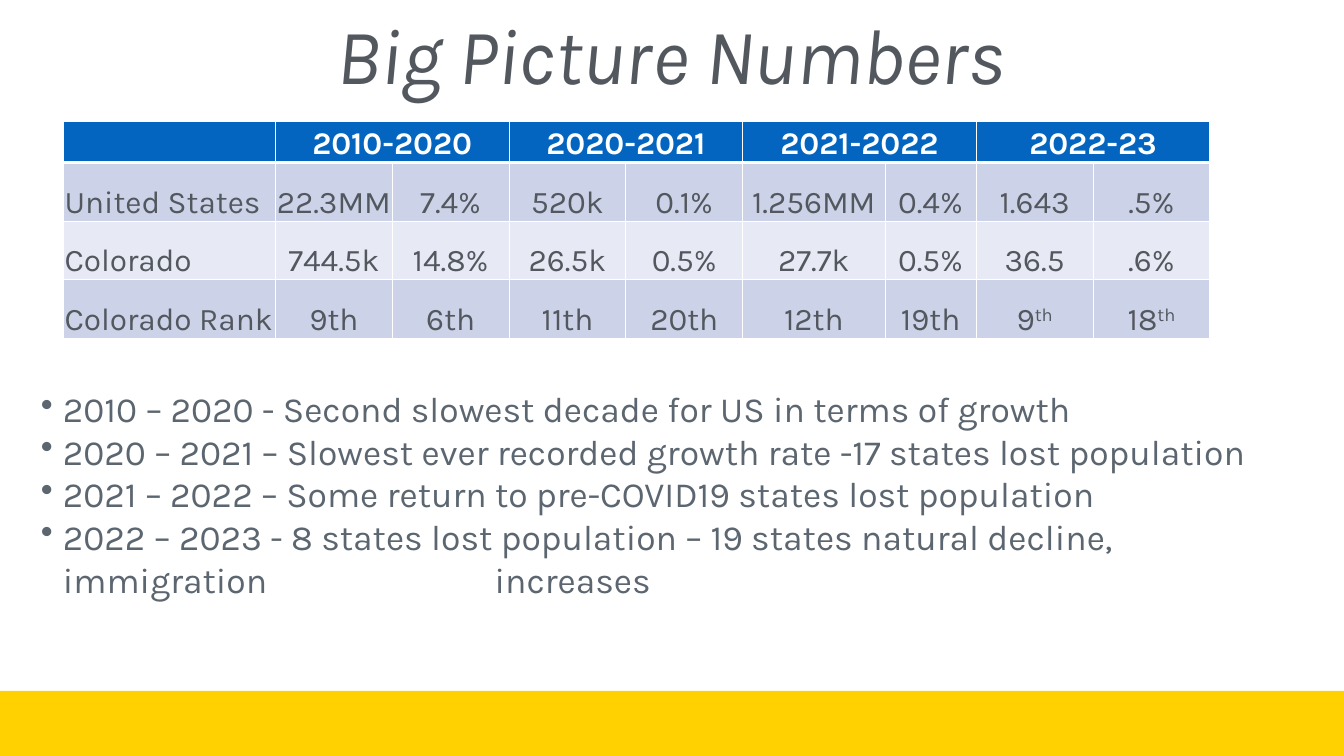
from lxml import etree
from pptx import Presentation
from pptx.dml.color import RGBColor
from pptx.enum.shapes import MSO_SHAPE
from pptx.enum.text import MSO_ANCHOR, PP_ALIGN
from pptx.oxml.ns import qn
from pptx.util import Inches, Pt

RECT = MSO_SHAPE.RECTANGLE
BOTTOM = MSO_ANCHOR.BOTTOM
LEFT, CENTER = PP_ALIGN.LEFT, PP_ALIGN.CENTER

WIDE, HIGH = Inches(18.96), Inches(10.67)
FONT = "Karla"
HUES = {"band": "FFD100", "title": "53585F", "head": "0365C0", "odd": "CCD3E8",
        "even": "E7EAF4", "cell": "53585F", "white": "FFFFFF", "list": "5C6670"}

COLS = [2.99, 1.65, 1.65, 1.65, 1.65, 2.01, 1.29, 1.65, 1.65]
ROWS = [0.57, 0.83, 0.83, 0.83]
YEARS = ["2010-2020", "2020-2021", "2021-2022", "2022-23"]
DATA = [
    ["United States", "22.3MM", "7.4%", "520k", "0.1%", "1.256MM", "0.4%", "1.643", ".5%"],
    ["Colorado", "744.5k", "14.8%", "26.5k", "0.5%", "27.7k", "0.5%", "36.5", ".6%"],
    ["Colorado Rank", "9th", "6th", "11th", "20th", "12th", "19th", "9", "18"],
]
RAISED = 7  # ranks from this column on have a raised suffix
NOTES = [
    "2010 – 2020 - Second slowest decade for US in terms of growth",
    "2020 – 2021 – Slowest ever recorded growth rate -17 states lost population",
    "2021 – 2022 – Some return to pre-COVID19 states lost population",
    "2022 – 2023 - 8 states lost population – 19 states natural decline, immigration\tincreases",
]


def area(x, y, w, h):
    """Box from percentages of the slide's size."""
    return [int(WIDE * x / 100), int(HIGH * y / 100),
            int(WIDE * w / 100), int(HIGH * h / 100)]


def color(name):
    return RGBColor.from_string(HUES[name])


def style(para, size, hue, bold=False, italic=False):
    for run in para.runs:
        font = run.font
        font.name, font.size = FONT, Pt(size)
        font.bold, font.italic = bold, italic
        font.color.rgb = color(hue)


def add_band(slide, box):
    band = slide.shapes.add_shape(RECT, *box)
    band.shadow.inherit = False
    band.fill.solid()
    band.fill.fore_color.rgb = color("band")
    band.line.fill.background()


def add_title(slide, box):
    frame = slide.shapes.add_textbox(*box).text_frame
    frame.word_wrap = True
    frame.vertical_anchor = BOTTOM
    frame.margin_top = frame.margin_bottom = 0
    para = frame.paragraphs[0]
    para.text = "Big Picture Numbers"
    para.alignment = CENTER
    style(para, 80, "title", italic=True)


def add_edges(cell, base):
    """White borders; the bottom one has its own width."""
    props = cell._tc.get_or_add_tcPr()
    for side in "LRTB":
        width = base if side == "B" else 1
        line = etree.SubElement(props, qn("a:ln" + side), w=str(Pt(width)))
        fill = etree.SubElement(line, qn("a:solidFill"))
        etree.SubElement(fill, qn("a:srgbClr"), val=HUES["white"])


def fill_cell(cell, text, hue, ink, align=CENTER, bold=False):
    cell.fill.solid()
    cell.fill.fore_color.rgb = color(hue)
    cell.vertical_anchor = BOTTOM
    cell.margin_left = cell.margin_right = cell.margin_top = Inches(0.01)
    cell.margin_bottom = 0
    para = cell.text_frame.paragraphs[0]
    para.text = text
    para.alignment = align
    style(para, 32, ink, bold)
    return para


def add_table(slide, box):
    table = slide.shapes.add_table(len(ROWS), len(COLS), *box).table
    for col, part in zip(table.columns, COLS):
        col.width = int(box[2] * part / sum(COLS))
    for row, part in zip(table.rows, ROWS):
        row.height = int(box[3] * part / sum(ROWS))
    for r in range(len(ROWS)):
        for c in range(len(COLS)):
            add_edges(table.cell(r, c), 1 if r else 3)

    # Header: each period spans two columns
    fill_cell(table.cell(0, 0), "", "head", "white")
    for i, year in enumerate(YEARS):
        cell = table.cell(0, 2 * i + 1)
        cell.merge(table.cell(0, 2 * i + 2))
        fill_cell(cell, year, "head", "white", bold=True)

    # Body
    for r, row in enumerate(DATA, 1):
        for c, text in enumerate(row):
            para = fill_cell(table.cell(r, c), text, "odd" if r % 2 else "even",
                             "cell", CENTER if c else LEFT)
            if r == len(DATA) and c >= RAISED:
                run = para.add_run()
                run.text = "th"
                style(para, 32, "cell")
                run._r.get_or_add_rPr().set("baseline", "30000")


def add_list(slide, box):
    frame = slide.shapes.add_textbox(*box).text_frame
    frame.word_wrap = True
    for i, note in enumerate(NOTES):
        para = frame.add_paragraph() if i else frame.paragraphs[0]
        para.text = note
        props = para._p.get_or_add_pPr()
        props.set("marL", str(Inches(0.31)))
        props.set("indent", str(-Inches(0.31)))
        etree.SubElement(props, qn("a:buChar"), char="•")
        if "\t" in note:
            tabs = etree.SubElement(props, qn("a:tabLst"))
            etree.SubElement(tabs, qn("a:tab"), pos=str(Inches(6.4)), algn="l")
        style(para, 36, "list")


def main():
    deck = Presentation()
    deck.slide_width, deck.slide_height = WIDE, HIGH
    slide = deck.slides.add_slide(deck.slide_layouts[6])
    add_band(slide, area(0, 91.38, 100, 8.62))
    add_title(slide, area(18.83, 0.37, 62.18, 12.84))
    add_table(slide, area(4.75, 16.12, 85.28, 28.68))
    add_list(slide, area(2.53, 50.8, 95.36, 29.33))
    deck.save("out.pptx")


if __name__ == "__main__":
    main()
